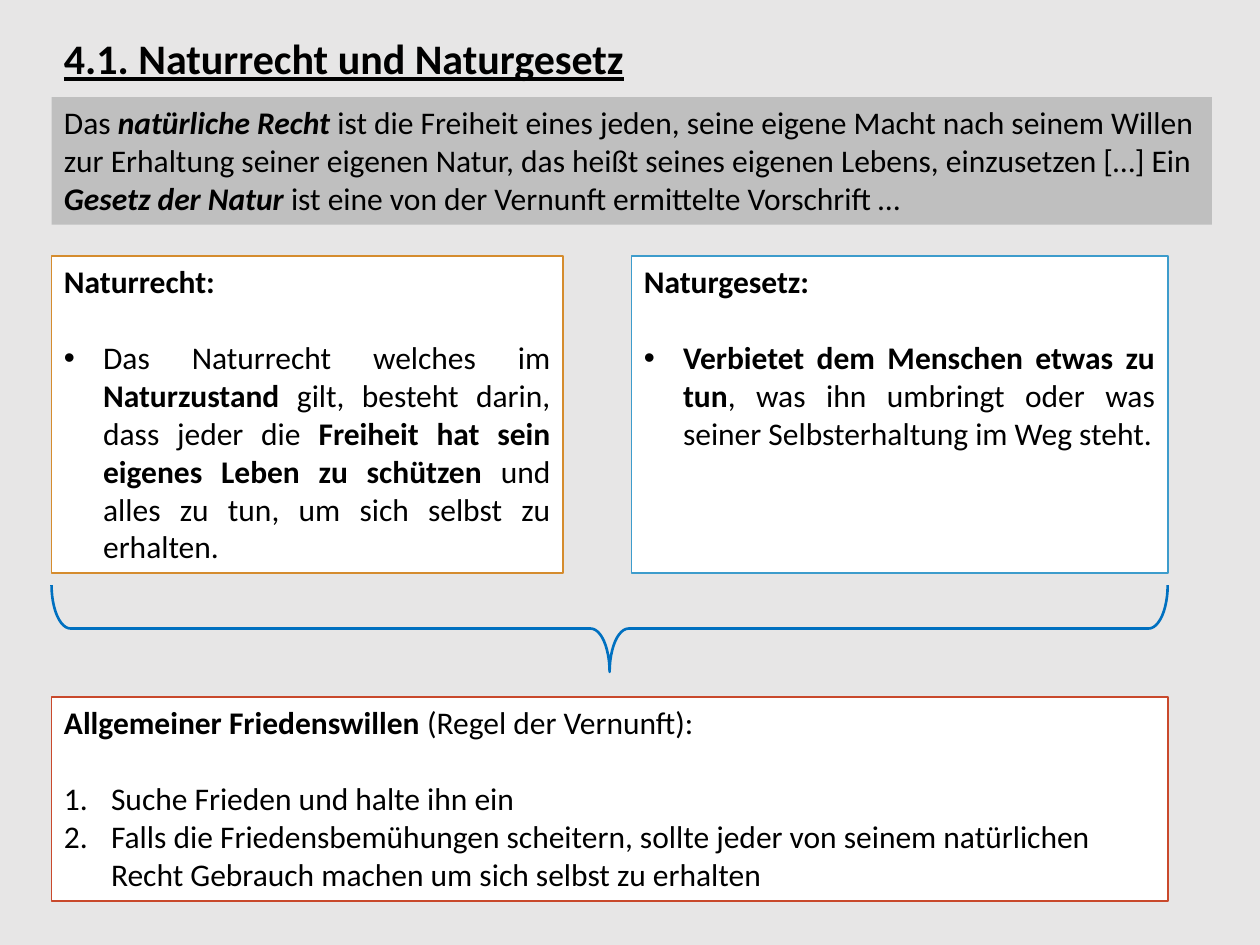
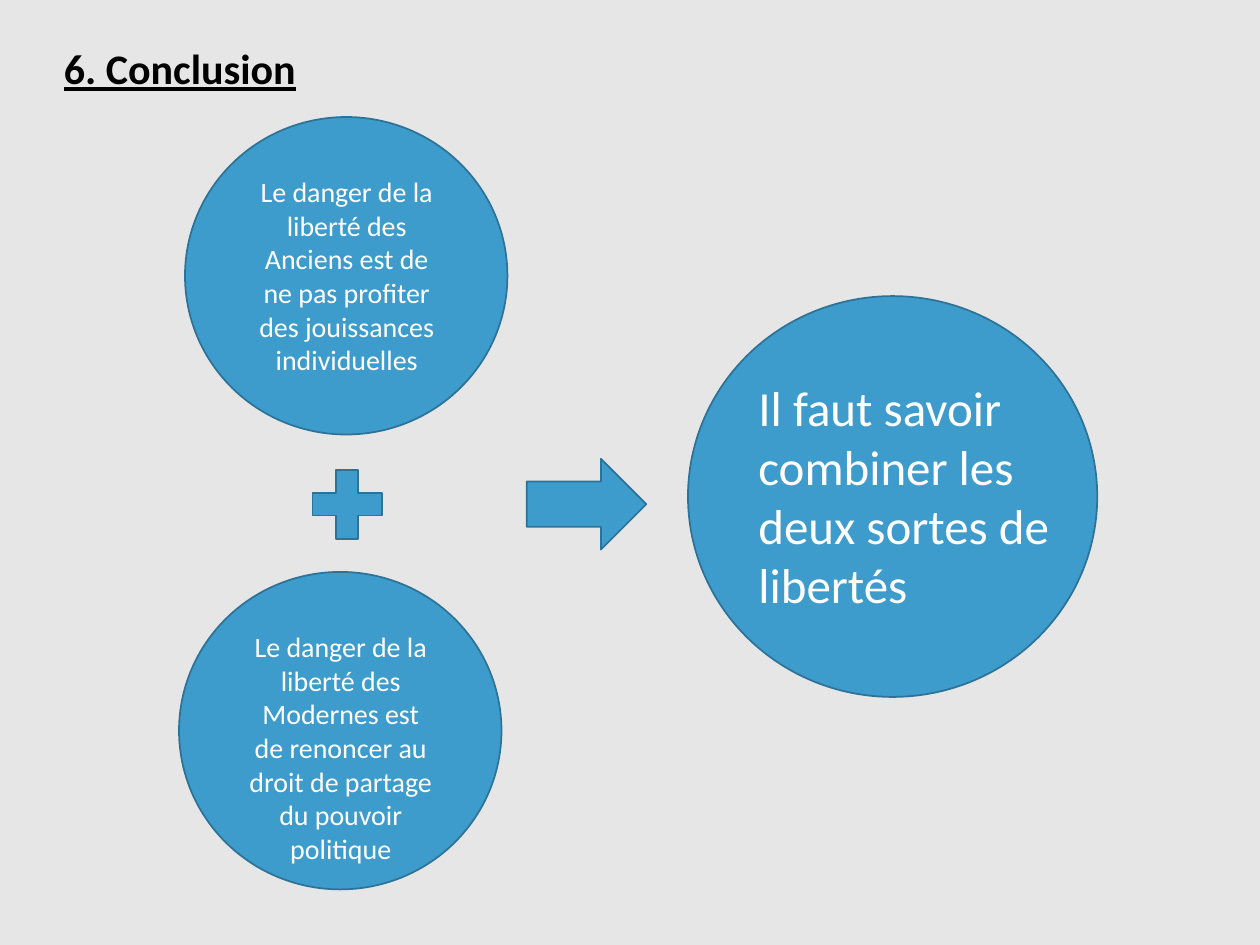
from lxml import etree
from pptx import Presentation
from pptx.dml.color import RGBColor
from pptx.enum.shapes import MSO_SHAPE
from pptx.enum.text import MSO_ANCHOR, PP_ALIGN
from pptx.oxml.ns import qn
from pptx.util import Cm, Pt

RECTANGLE, ELLIPSE = MSO_SHAPE.RECTANGLE, MSO_SHAPE.OVAL
PLUS, ARROW = MSO_SHAPE.MATH_PLUS, MSO_SHAPE.RIGHT_ARROW
BRACE = MSO_SHAPE.LEFT_BRACE
LEFT, CENTER, JUSTIFY = PP_ALIGN.LEFT, PP_ALIGN.CENTER, PP_ALIGN.JUSTIFY
TOP = MSO_ANCHOR.TOP

FONT = "Calibri"
COLORS = {
    "background": "E7E6E6",
    "text": "000000",
    "light": "FFFFFF",
    "quote": "BFBFBF",
    "blue": "3D9CCC",
    "blue_edge": "2D7397",
    "orange": "D58C2E",
    "red": "C9492C",
    "brace": "0070C0",
}
MARGIN = 1.04
CONTENT_WIDTH = 22.5
COLUMN_TOP, COLUMN_HEIGHT = 5.16, 6.4
BRACE_MIDDLE, BRACE_DEPTH = 12.67, 1.75
BLANK_LINE = 22
DANGER_WIDTH, DANGER_HEIGHT = 6.5, 6.4


def rgb(name):
    """Return the named colour."""
    return RGBColor.from_string(COLORS[name])


def add_page(deck, title, title_top, title_width):
    """Add a grey page with its underlined title."""
    page = deck.slides.add_slide(deck.slide_layouts[6])
    page.background.fill.solid()
    page.background.fill.fore_color.rgb = rgb("background")
    box = page.shapes.add_textbox(Cm(MARGIN), Cm(title_top), Cm(title_width), Cm(1.27))
    box.text_frame.word_wrap = False
    para = box.text_frame.paragraphs[0]
    write(para, [(title, "")], 24, "text")
    para.font.bold = para.font.underline = True
    return page


def add_figure(page, kind, left, top, width, height, fill=None, line=None, weight=1):
    """Add a preset shape without shadow."""
    figure = page.shapes.add_shape(kind, Cm(left), Cm(top), Cm(width), Cm(height))
    figure.shadow.inherit = False
    if fill:
        figure.fill.solid()
        figure.fill.fore_color.rgb = rgb(fill)
    else:
        figure.fill.background()
    if line:
        figure.line.color.rgb = rgb(line)
        figure.line.width = Pt(weight)
    else:
        figure.line.fill.background()
    return figure


def write(para, spans, size, color, align=LEFT):
    """Fill a paragraph with (text, style) spans, style being made of b and i."""
    para.alignment = align
    para.font.name = FONT
    para.font.size = Pt(size)
    para.font.color.rgb = rgb(color)
    for text, style in spans:
        span = para.add_run()
        span.text = text
        if "b" in style:
            span.font.bold = True
        if "i" in style:
            span.font.italic = True


def add_marker(para, indent, tag, **attributes):
    """Give a paragraph a hanging bullet or number."""
    properties = para._p.get_or_add_pPr()
    properties.set("marL", str(Cm(indent)))
    properties.set("indent", str(-Cm(indent)))
    if tag == "a:buChar":
        etree.SubElement(properties, qn("a:buFont"), typeface="Arial")
    etree.SubElement(properties, qn(tag), **attributes)


def add_panel(page, left, top, width, height, heading, items=(), marker=None,
              fill="light", line=None, align=LEFT):
    """Add a rectangle with a heading and a marked list one line below it."""
    panel = add_figure(page, RECTANGLE, left, top, width, height, fill, line)
    frame = panel.text_frame
    frame.word_wrap = True
    frame.vertical_anchor = TOP
    write(frame.paragraphs[0], heading, 18, "text", align)
    for index, spans in enumerate(items):
        para = frame.add_paragraph()
        if index == 0:
            para.space_before = Pt(BLANK_LINE)
        add_marker(para, **marker)
        write(para, spans, 18, "text", align)


def add_circle(page, left, top, width, height, text, text_area, size, align):
    """Add a blue ellipse and its text, placed relative to the ellipse."""
    add_figure(page, ELLIPSE, left, top, width, height, "blue", "blue_edge")
    shift_x, shift_y, text_width, text_height = text_area
    box = page.shapes.add_textbox(Cm(left + shift_x), Cm(top + shift_y),
                                  Cm(text_width), Cm(text_height))
    box.text_frame.word_wrap = True
    write(box.text_frame.paragraphs[0], [(text, "")], size, "light", align)


def build_natural_law(deck):
    """Build the page on natural right and natural law."""
    page = add_page(deck, "4.1. Naturrecht und Naturgesetz", 0.53, 11.91)
    add_panel(page, MARGIN, 1.96, 23.39, 2.57, [
        ("Das ", ""),
        ("natürliche Recht ", "bi"),
        ("ist die Freiheit eines jeden, seine eigene Macht nach seinem Willen zur "
         "Erhaltung seiner eigenen Natur, das heißt seines eigenen Lebens, "
         "einzusetzen […] Ein ", ""),
        ("Gesetz der Natur", "bi"),
        (" ist eine von der Vernunft ermittelte Vorschrift …", ""),
    ], fill="quote")

    bullet = {"indent": 0.79, "tag": "a:buChar", "char": "•"}
    number = {"indent": 0.95, "tag": "a:buAutoNum", "type": "arabicPeriod"}
    right = [
        ("Das Naturrecht welches im ", ""),
        ("Naturzustand", "b"),
        (" gilt, besteht darin, dass jeder die ", ""),
        ("Freiheit hat sein eigenes Leben zu schützen", "b"),
        (" und alles zu tun, um sich selbst zu erhalten.", ""),
    ]
    law = [
        ("Verbietet dem Menschen etwas zu tun", "b"),
        (", was ihn umbringt oder was seiner Selbsterhaltung im Weg steht.", ""),
    ]
    for left, width, heading, spans, line in (
        (MARGIN, 10.31, "Naturrecht:", right, "orange"),
        (12.73, 10.81, "Naturgesetz:", law, "blue"),
    ):
        add_panel(page, left, COLUMN_TOP, width, COLUMN_HEIGHT, [(heading, "b")],
                  [spans], bullet, line=line, align=JUSTIFY)

    add_panel(page, MARGIN, 14.05, CONTENT_WIDTH, 4.11, [
        ("Allgemeiner Friedenswillen", "b"),
        (" (Regel der Vernunft):", ""),
    ], [
        [("Suche Frieden und halte ihn ein", "")],
        [("Falls die Friedensbemühungen scheitern, sollte jeder von seinem natürlichen "
          "Recht Gebrauch machen um sich selbst zu erhalten", "")],
    ], number, line="red")

    brace = add_figure(page, BRACE, MARGIN + (CONTENT_WIDTH - BRACE_DEPTH) / 2,
                       BRACE_MIDDLE - CONTENT_WIDTH / 2, BRACE_DEPTH, CONTENT_WIDTH,
                       line="brace", weight=1.5)
    brace.rotation = 270
    brace.adjustments[0] = 0.22


def build_conclusion(deck):
    """Build the page that combines both kinds of liberty."""
    page = add_page(deck, "6. Conclusion", 0.74, 5.23)
    for left, top, text, text_height in (
        (3.73, 2.36, "Le danger de la liberté des Anciens est de ne pas profiter "
                     "des jouissances individuelles", 4.37),
        (3.61, 11.53, "Le danger de la liberté des Modernes est de renoncer au "
                      "droit de partage du pouvoir politique", 5.05),
    ):
        add_circle(page, left, top, DANGER_WIDTH, DANGER_HEIGHT, text,
                   (1.14, 1.04, 4.24, text_height), 16, CENTER)
    add_figure(page, PLUS, 6.05, 9.22, 1.9, 1.9, "blue", "blue_edge")
    add_figure(page, ARROW, 10.62, 9.25, 2.41, 1.83, "blue", "blue_edge")
    add_circle(page, 13.87, 5.97, 8.25, 8.08,
               "Il faut savoir combiner les deux sortes de libertés",
               (1.17, 1.52, 7.49, 5.05), 28, LEFT)


def main():
    """Build and save the deck."""
    deck = Presentation()
    deck.slide_width, deck.slide_height = Cm(25.4), Cm(19.05)
    build_natural_law(deck)
    build_conclusion(deck)
    deck.save("out.pptx")


if __name__ == "__main__":
    main()
